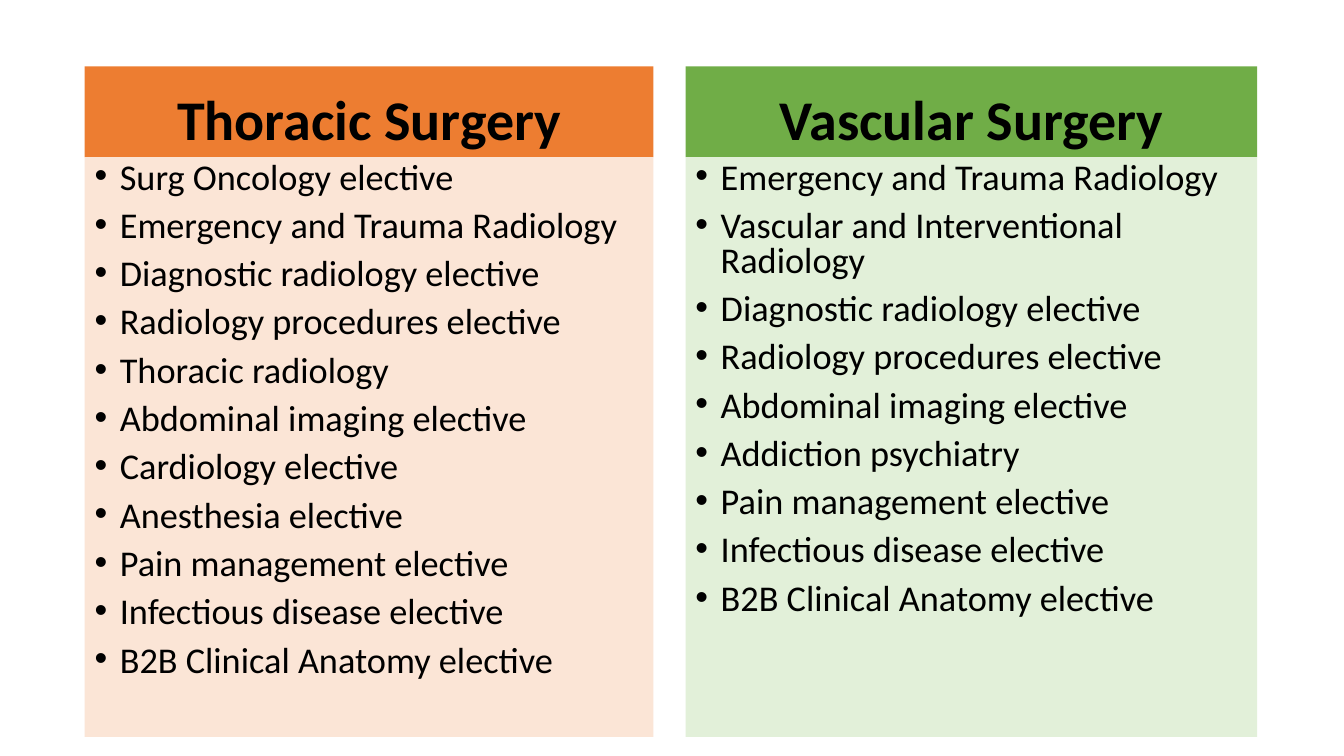
from dataclasses import dataclass

from lxml import etree
from pptx import Presentation
from pptx.dml.color import RGBColor
from pptx.enum.shapes import MSO_SHAPE
from pptx.enum.text import MSO_ANCHOR, PP_ALIGN
from pptx.oxml.ns import qn
from pptx.util import Inches, Pt

RECT = MSO_SHAPE.RECTANGLE
TOP, BOTTOM = MSO_ANCHOR.TOP, MSO_ANCHOR.BOTTOM
LEFT, CENTER = PP_ALIGN.LEFT, PP_ALIGN.CENTER


@dataclass(frozen=True)
class Theme:
    """Colours, font, type sizes and spacing."""
    font: str = "Calibri"
    ink: str = "000000"
    orange: str = "ED7D31"
    peach: str = "FBE5D6"
    green: str = "70AD47"
    mint: str = "E2F0D9"
    head: float = 40
    body: float = 25.9
    indent: float = 0.25


THEME = Theme()
WIDTH, HEIGHT = 13.33, 7.5
HEAD = 0.9
ROW, DEPTH = 0.66, 6.65

PANELS = [
    (0.84, 5.64, THEME.orange, THEME.peach, "Thoracic Surgery", [
        "Surg Oncology elective",
        "Emergency and Trauma Radiology",
        "Diagnostic radiology elective",
        "Radiology procedures elective",
        "Thoracic radiology",
        "Abdominal imaging elective",
        "Cardiology elective",
        "Anesthesia elective",
        "Pain management elective",
        "Infectious disease elective",
        "B2B Clinical Anatomy elective",
    ]),
    (6.8, 5.67, THEME.green, THEME.mint, "Vascular Surgery", [
        "Emergency and Trauma Radiology",
        "Vascular and Interventional Radiology",
        "Diagnostic radiology elective",
        "Radiology procedures elective",
        "Abdominal imaging elective",
        "Addiction psychiatry",
        "Pain management elective",
        "Infectious disease elective",
        "B2B Clinical Anatomy elective",
    ]),
]


def add_block(slide, box, fill, anchor):
    """Add a plain filled rectangle and return its text frame."""
    shape = slide.shapes.add_shape(RECT, *(Inches(side) for side in box))
    shape.shadow.inherit = False
    shape.fill.solid()
    shape.fill.fore_color.rgb = RGBColor.from_string(fill)
    shape.line.fill.background()
    frame = shape.text_frame
    frame.word_wrap = True
    frame.vertical_anchor = anchor
    return frame


def add_text(para, text, size, align, lead, gap, bold=False):
    """Set a paragraph's spacing and add its run."""
    para.alignment = align
    para.line_spacing = lead
    para.space_before = Pt(gap)
    run = para.add_run()
    run.text = text
    run.font.name = THEME.font
    run.font.size = Pt(size)
    run.font.bold = bold
    run.font.color.rgb = RGBColor.from_string(THEME.ink)


def add_bullet(para):
    """Give a paragraph a hanging bullet."""
    props = para._p.get_or_add_pPr()
    props.set("marL", str(Inches(THEME.indent)))
    props.set("indent", str(-Inches(THEME.indent)))
    etree.SubElement(props, qn("a:buFont")).set("typeface", "Arial")
    etree.SubElement(props, qn("a:buChar")).set("char", "•")


def add_panel(slide, box, dark, pale, title, items):
    """Place a heading bar over a bulleted list within the box."""
    left, top, width, height = box
    bar = add_block(slide, (left, top, width, HEAD), dark, BOTTOM)
    add_text(bar.paragraphs[0], title, THEME.head, CENTER, 0.9, 10, True)
    area = (left, top + HEAD, width, height - HEAD)
    frame = add_block(slide, area, pale, TOP)
    for index, item in enumerate(items):
        para = frame.add_paragraph() if index else frame.paragraphs[0]
        add_text(para, item, THEME.body, LEFT, 0.8, 9.6)
        add_bullet(para)


def main():
    """Build and save the slide."""
    deck = Presentation()
    deck.slide_width, deck.slide_height = Inches(WIDTH), Inches(HEIGHT)
    slide = deck.slides.add_slide(deck.slide_layouts[6])
    for left, width, *parts in PANELS:
        add_panel(slide, (left, ROW, width, DEPTH), *parts)
    deck.save("out.pptx")


if __name__ == "__main__":
    main()
